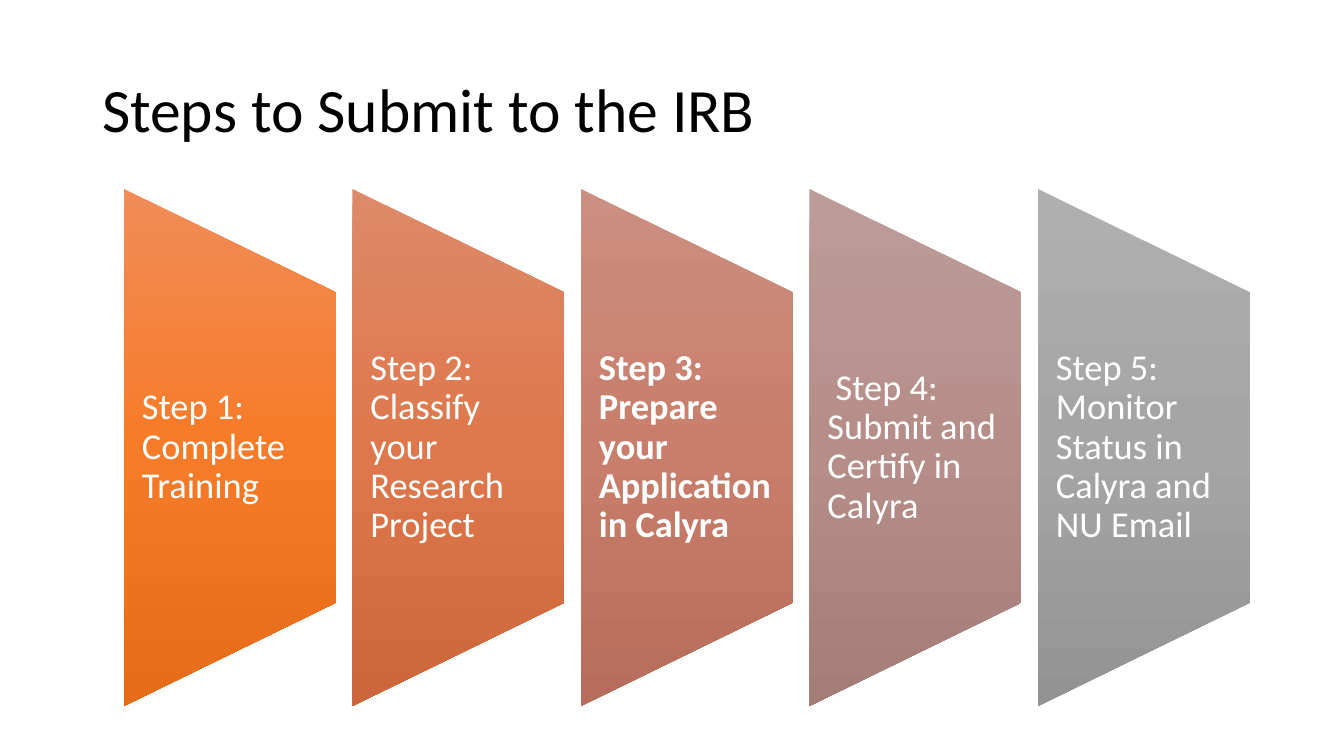
"""Build a slide with five tapered panels for the steps to submit to the IRB."""
from lxml import etree
from pptx import Presentation
from pptx.dml.color import RGBColor
from pptx.enum.shapes import MSO_SHAPE
from pptx.enum.text import MSO_ANCHOR, MSO_AUTO_SIZE, PP_ALIGN
from pptx.oxml.ns import qn
from pptx.util import Pt

TITLE = "Steps to Submit to the IRB"
STEPS = [
    ("Step 1: Complete Training", False, ("F18C57", "F67B28", "E56C19")),
    ("Step 2: Classify your Research Project", False, ("DD8A6A", "DE774B", "CD673B")),
    ("Step 3: Prepare your Application in Calyra", True, ("CB8F81", "C97E6B", "B76D5B")),
    (" Step 4: Submit and Certify in Calyra", False, ("BC9C99", "B68E89", "A47C78")),
    ("Step 5: Monitor Status in Calyra and NU Email", False, ("AFAFAF", "A5A5A5", "939393")),
]

PX = 914400 / 100.8
SLIDE_SIZE = (1344, 756)
TITLE_BOX = (92, 40, 1159, 146)
PANELS_LEFT, PANELS_RIGHT = 124, 1250
PANEL_TOP, PANEL_WIDTH, PANEL_HEIGHT = 189, 212, 517
TEXT_HEIGHT = 310
TEXT_INSET = 18
TITLE_ONLY_LAYOUT = 5

TRAPEZOID = MSO_SHAPE.FLOWCHART_MANUAL_OPERATION
MIDDLE = MSO_ANCHOR.MIDDLE
NO_AUTOFIT = MSO_AUTO_SIZE.NONE
LEFT = PP_ALIGN.LEFT


def emu(px):
    """Turn pixels into EMU."""
    return round(px * PX)


def color(value):
    """Turn a hex string into a colour."""
    return RGBColor.from_string(value)


def write(box, text, size, value, inset=None, bold=False):
    """Put one formatted paragraph into a box."""
    frame = box.text_frame
    frame_format = {"word_wrap": True, "auto_size": NO_AUTOFIT, "vertical_anchor": MIDDLE}
    if inset is not None:
        frame_format.update(margin_left=emu(inset), margin_right=emu(inset),
                            margin_top=0, margin_bottom=0)
    for name, setting in frame_format.items():
        setattr(frame, name, setting)
    para = frame.paragraphs[0]
    para.alignment, para.line_spacing = LEFT, 0.9
    span = para.add_run()
    span.text = text
    for name, setting in {"name": "Calibri", "size": Pt(size), "bold": bold}.items():
        setattr(span.font, name, setting)
    span.font.color.rgb = color(value)


def fill_gradient(shape, values):
    """Fill a shape from top to bottom, whatever its rotation."""
    shape.fill.gradient()
    gradient = shape._element.spPr.find(qn("a:gradFill"))
    gradient.set("rotWithShape", "0")
    for child in list(gradient):
        gradient.remove(child)
    stops = etree.SubElement(gradient, qn("a:gsLst"))
    for index, value in enumerate(values):
        stop = etree.SubElement(stops, qn("a:gs"), pos=str(index * 50000))
        etree.SubElement(stop, qn("a:srgbClr"), val=str(color(value)))
    etree.SubElement(gradient, qn("a:lin"), ang="5400000", scaled="0")


def add_panel(page, left, text, bold, values):
    """Add one tapered panel with its text."""
    center_x = left + PANEL_WIDTH / 2
    center_y = PANEL_TOP + PANEL_HEIGHT / 2
    shape = page.shapes.add_shape(
        TRAPEZOID, emu(center_x - PANEL_HEIGHT / 2), emu(center_y - PANEL_WIDTH / 2),
        emu(PANEL_HEIGHT), emu(PANEL_WIDTH))
    shape.rotation = 270
    shape.shadow.inherit = False
    shape.line.fill.background()
    fill_gradient(shape, values)
    box = page.shapes.add_textbox(emu(left), emu(center_y - TEXT_HEIGHT / 2),
                                  emu(PANEL_WIDTH), emu(TEXT_HEIGHT))
    write(box, text, 26, "FFFFFF", TEXT_INSET, bold)


def main():
    """Build and save the deck."""
    deck = Presentation()
    deck.slide_width, deck.slide_height = map(emu, SLIDE_SIZE)
    page = deck.slides.add_slide(deck.slide_layouts[TITLE_ONLY_LAYOUT])
    title = page.shapes.title
    title.left, title.top, title.width, title.height = map(emu, TITLE_BOX)
    write(title, TITLE, 44, "000000")
    pitch = (PANELS_RIGHT - PANELS_LEFT - PANEL_WIDTH) / (len(STEPS) - 1)
    for index, (text, bold, values) in enumerate(STEPS):
        add_panel(page, PANELS_LEFT + index * pitch, text, bold, values)
    deck.save("out.pptx")


if __name__ == "__main__":
    main()
